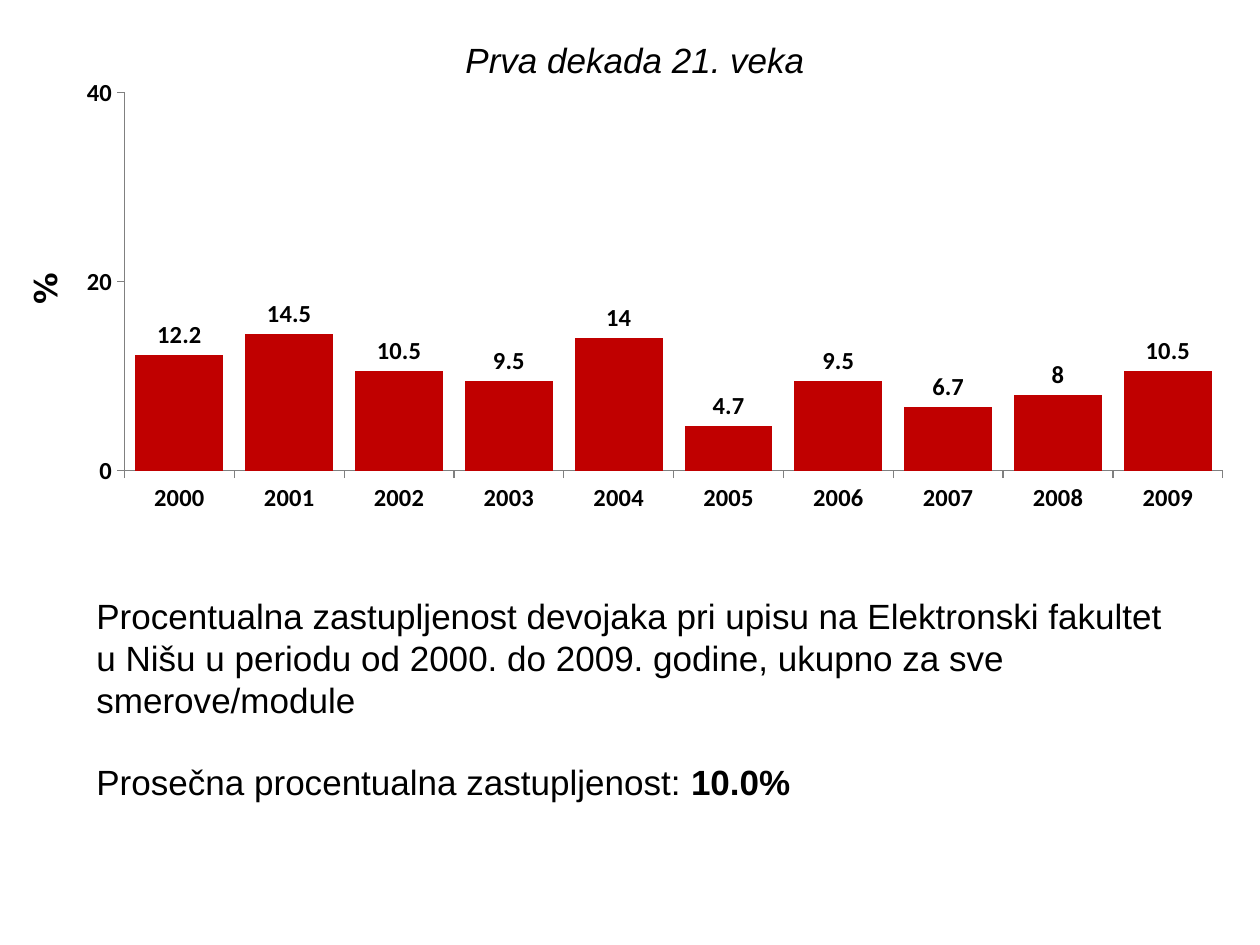
from dataclasses import dataclass

from pptx import Presentation
from pptx.chart.data import CategoryChartData
from pptx.dml.color import RGBColor
from pptx.enum.chart import XL_CHART_TYPE, XL_LABEL_POSITION, XL_TICK_MARK
from pptx.enum.shapes import MSO_SHAPE
from pptx.enum.text import MSO_ANCHOR, MSO_AUTO_SIZE, PP_ALIGN
from pptx.oxml import parse_xml
from pptx.oxml.ns import nsdecls
from pptx.util import Emu, Pt

COLUMN = XL_CHART_TYPE.COLUMN_CLUSTERED
OUT_END = XL_LABEL_POSITION.OUTSIDE_END
TICK_OUT, TICK_NONE = XL_TICK_MARK.OUTSIDE, XL_TICK_MARK.NONE
RECT = MSO_SHAPE.RECTANGLE
TOP, MIDDLE = MSO_ANCHOR.TOP, MSO_ANCHOR.MIDDLE
LEFT, CENTER = PP_ALIGN.LEFT, PP_ALIGN.CENTER
NO_FIT = MSO_AUTO_SIZE.NONE

SCALE = 914400 / 126  # EMU in one px
TITLE_ONLY = 5


@dataclass(frozen=True)
class Theme:
    ink: RGBColor = RGBColor(0, 0, 0)
    paper: RGBColor = RGBColor(255, 255, 255)
    bar: RGBColor = RGBColor(0xC0, 0, 0)
    axis: RGBColor = RGBColor(0x80, 0x80, 0x80)
    face: str = "Arial"
    chart_face: str = "Calibri"
    unit_face: str = "DejaVu Sans"
    body: int = 20
    unit: int = 18
    label: int = 14


def px(*nums):
    return [Emu(round(n * SCALE)) for n in nums]


def style(font, face, size, color, bold=False, italic=False):
    font.name, font.size = face, Pt(size)
    font.bold, font.italic = bold, italic
    font.color.rgb = color


def write(para, text, align=LEFT, before=0, **form):
    para.alignment = align
    para.space_before = Pt(before)
    run = para.add_run()
    run.text = text
    style(run.font, **form)


class Page:
    def __init__(self, deck, theme):
        self.theme = theme
        self.slide = deck.slides.add_slide(deck.slide_layouts[TITLE_ONLY])

    def form(self, **more):
        base = {"face": self.theme.face, "size": self.theme.body,
                "color": self.theme.ink}
        return base | more

    def title(self, text, box):
        shape = self.slide.shapes.title
        shape.left, shape.top, shape.width, shape.height = px(*box)
        frame = shape.text_frame
        frame.auto_size = NO_FIT
        frame.vertical_anchor = TOP
        write(frame.paragraphs[0], text, align=CENTER, **self.form(italic=True))

    def text(self, paras, box):
        """Each paragraph is (space before, [(text, bold), ...])."""
        frame = self.slide.shapes.add_textbox(*px(*box)).text_frame
        frame.word_wrap = True
        for i, (gap, runs) in enumerate(paras):
            para = frame.add_paragraph() if i else frame.paragraphs[0]
            for text, bold in runs:
                write(para, text, before=gap, **self.form(bold=bold))

    def unit(self, text, box):
        shape = self.slide.shapes.add_shape(RECT, *px(*box))
        shape.rotation = 270
        shape.shadow.inherit = False
        shape.fill.solid()
        shape.fill.fore_color.rgb = self.theme.paper
        shape.line.fill.background()
        frame = shape.text_frame
        frame.margin_left = frame.margin_right = 0
        frame.margin_top = frame.margin_bottom = 0
        frame.vertical_anchor = MIDDLE
        write(frame.paragraphs[0], text, align=CENTER,
              **self.form(face=self.theme.unit_face, size=self.theme.unit,
                          bold=True))

    def chart(self, data, box, plot_box, top, step):
        theme = self.theme
        chart = self.slide.shapes.add_chart(COLUMN, *px(*box), data).chart
        chart.has_legend = chart.has_title = False
        style(chart.font, theme.chart_face, theme.label, theme.ink, bold=True)

        # Axes
        for axis in (chart.category_axis, chart.value_axis):
            axis.has_major_gridlines = False
            axis.major_tick_mark, axis.minor_tick_mark = TICK_OUT, TICK_NONE
            axis.format.line.color.rgb = theme.axis
            axis.format.line.width = Pt(0.75)
        scale = chart.value_axis
        scale.minimum_scale, scale.maximum_scale = 0, top
        scale.major_unit = step

        # Bars and their values
        plot = chart.plots[0]
        plot.gap_width = 25
        plot.vary_by_categories = False
        fill = plot.series[0].format.fill
        fill.solid()
        fill.fore_color.rgb = theme.bar
        plot.has_data_labels = True
        labels = plot.data_labels
        labels.show_value = True
        labels.position = OUT_END
        style(labels.font, theme.chart_face, theme.label, theme.ink, bold=True)
        self.place(chart, plot_box)

    def place(self, chart, plot_box):
        """Fix the inner plot area, in shares of the chart."""
        marks = "".join(f'<c:{k}Mode val="edge"/>' for k in "xy")
        sizes = "".join(f'<c:{k} val="{v}"/>' for k, v in zip("xywh", plot_box))
        layout = parse_xml(
            f'<c:layout {nsdecls("c")}><c:manualLayout>'
            f'<c:layoutTarget val="inner"/>{marks}{sizes}'
            '</c:manualLayout></c:layout>')
        area = chart.plots[0]._element.getparent()
        for old in area.findall(layout.tag):
            area.remove(old)
        area.insert(0, layout)


def main():
    deck = Presentation()
    deck.slide_width, deck.slide_height = px(1260, 945)
    page = Page(deck, Theme())

    # Share of girls by year
    data = CategoryChartData()
    data.categories = [str(year) for year in range(2000, 2010)]
    data.add_series("Series 1",
                    [12.2, 14.5, 10.5, 9.5, 14, 4.7, 9.5, 6.7, 8, 10.5])
    page.chart(data, (28, 74, 1207, 620), (0.08, 0.03, 0.91, 0.61), 40, 20)
    page.unit("%", (-92, 269, 273, 39))

    # Caption and average
    page.text([
        (0, [("Procentualna zastupljenost devojaka pri upisu na Elektronski "
              "fakultet u Nišu u periodu od 2000. do 2009. godine, ukupno za "
              "sve smerove/module", False)]),
        (23, [("Prosečna procentualna zastupljenost: ", False),
              ("10.0%", True)]),
    ], (84, 588, 1102, 352))

    # Heading
    page.title("Prva dekada 21. veka", (136, 32, 998, 55))
    deck.save("out.pptx")


if __name__ == "__main__":
    main()
